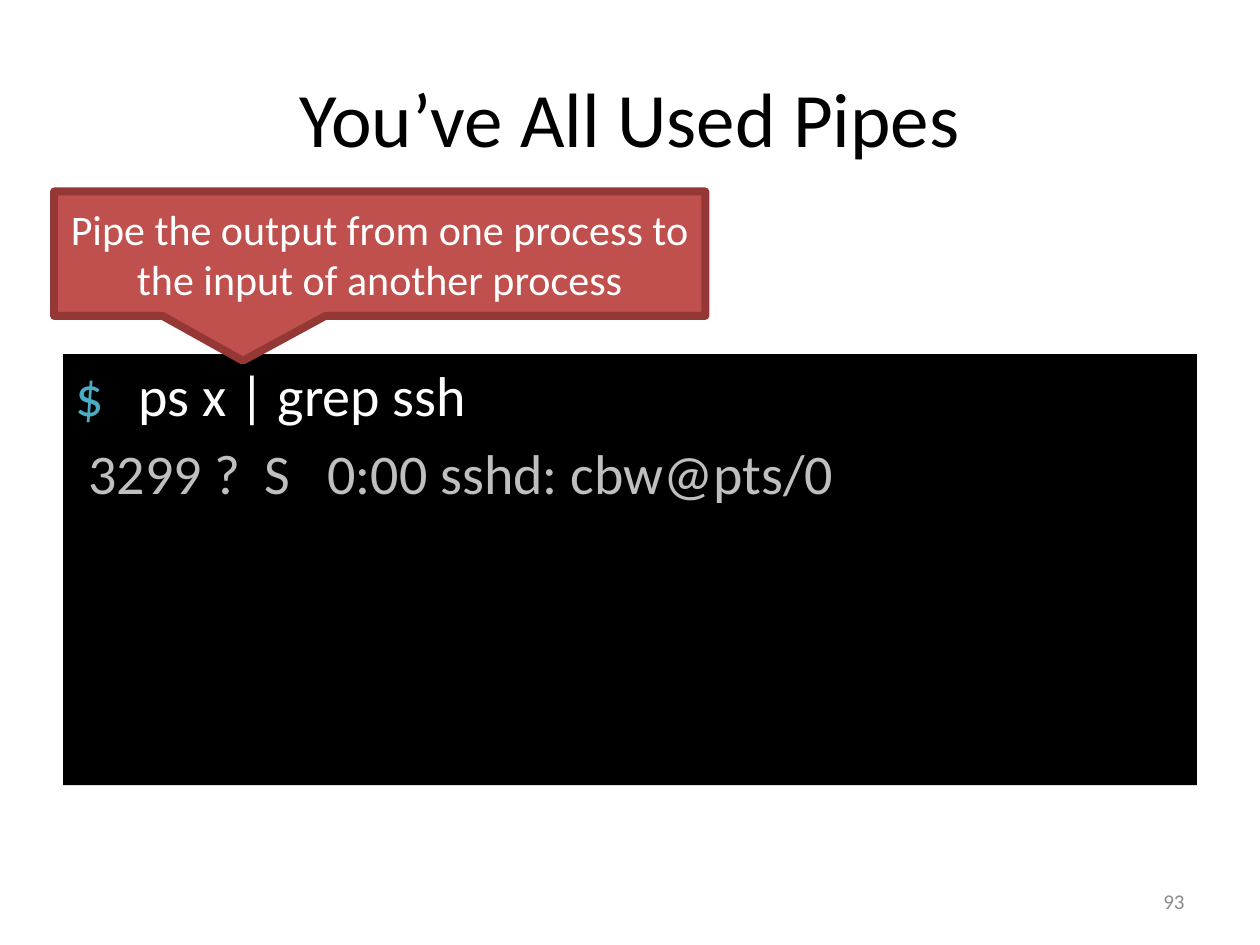
from lxml.etree import SubElement
from pptx import Presentation
from pptx.dml.color import RGBColor
from pptx.enum.shapes import MSO_SHAPE
from pptx.enum.text import MSO_ANCHOR, MSO_AUTO_SIZE, PP_ALIGN
from pptx.oxml.ns import qn
from pptx.util import Cm, Pt

FONT = "Calibri"
BLACK = RGBColor(0x00, 0x00, 0x00)
WHITE = RGBColor(0xFF, 0xFF, 0xFF)
PROMPT_BLUE = RGBColor(0x4B, 0xAC, 0xC6)
OUTPUT_GREY = RGBColor(0xBF, 0xBF, 0xBF)
NUMBER_GREY = RGBColor(0x8C, 0x8C, 0x8C)
CALLOUT_RED = RGBColor(0xC0, 0x50, 0x4D)
CALLOUT_EDGE = RGBColor(0x95, 0x37, 0x35)


def place(shape, box):
    shape.left, shape.top, shape.width, shape.height = (Cm(length) for length in box)


def style(para, size, color, align):
    para.alignment = align
    para.font.name = FONT
    para.font.size = Pt(size)
    para.font.color.rgb = color


def write_centred_middle(shape, text, size, color, align=PP_ALIGN.CENTER):
    frame = shape.text_frame
    frame.word_wrap = True
    frame.vertical_anchor = MSO_ANCHOR.MIDDLE
    frame.text = text
    style(frame.paragraphs[0], size, color, align)


def set_tab_stops(para, stops):
    """Remove the bullet and indent, then add left tab stops given in cm."""
    properties = para._p.get_or_add_pPr()
    properties.set("marL", "0")
    properties.set("indent", "0")
    SubElement(properties, qn("a:buNone"))
    tabs = SubElement(properties, qn("a:tabLst"))
    for stop in stops:
        SubElement(tabs, qn("a:tab"), pos=str(Cm(stop)), algn="l")


def add_title(page, box):
    title = page.shapes.title
    place(title, box)
    write_centred_middle(title, "You’ve All Used Pipes", 44, BLACK)


def add_terminal(page, box):
    terminal = page.placeholders[1]
    place(terminal, box)
    terminal.fill.solid()
    terminal.fill.fore_color.rgb = BLACK
    frame = terminal.text_frame
    frame.auto_size = MSO_AUTO_SIZE.NONE

    # Each line: tab stops, then coloured spans
    lines = [
        ([1.08], [("$\t", PROMPT_BLUE), ("ps x | grep ssh", WHITE)]),
        ([5.33, 7.37], [(" 3299 ?\tS\t0:00 sshd: cbw@pts/0", OUTPUT_GREY)]),
    ]
    for index, (stops, spans) in enumerate(lines):
        para = frame.add_paragraph() if index else frame.paragraphs[0]
        set_tab_stops(para, stops)
        for text, color in spans:
            span = para.add_run()
            span.text = text
            span.font.name = FONT
            span.font.size = Pt(32)
            span.font.color.rgb = color


def add_page_number(page, box):
    number = page.shapes.add_textbox(*(Cm(length) for length in box))
    write_centred_middle(number, "93", 12, NUMBER_GREY, PP_ALIGN.RIGHT)


def add_callout(page, box):
    callout = page.shapes.add_shape(
        MSO_SHAPE.RECTANGULAR_CALLOUT, *(Cm(length) for length in box))
    callout.shadow.inherit = False
    # Pointer tip, relative to the centre of the box
    callout.adjustments[0] = -0.21
    callout.adjustments[1] = 0.86
    callout.fill.solid()
    callout.fill.fore_color.rgb = CALLOUT_RED
    callout.line.color.rgb = CALLOUT_EDGE
    callout.line.width = Pt(4.5)
    write_centred_middle(
        callout,
        "Pipe the output from one process to the input of another process",
        24, WHITE)


def main():
    deck = Presentation()
    deck.slide_width, deck.slide_height = Cm(25.4), Cm(19.05)
    page = deck.slides.add_slide(deck.slide_layouts[1])
    # Boxes: left, top, width, height in cm
    add_title(page, (1.27, 0.76, 22.86, 3.18))
    add_terminal(page, (1.27, 7.14, 22.86, 8.69))
    add_page_number(page, (18.2, 17.66, 5.93, 1.01))
    add_callout(page, (1.09, 3.86, 13.13, 2.51))
    deck.save("out.pptx")


if __name__ == "__main__":
    main()
